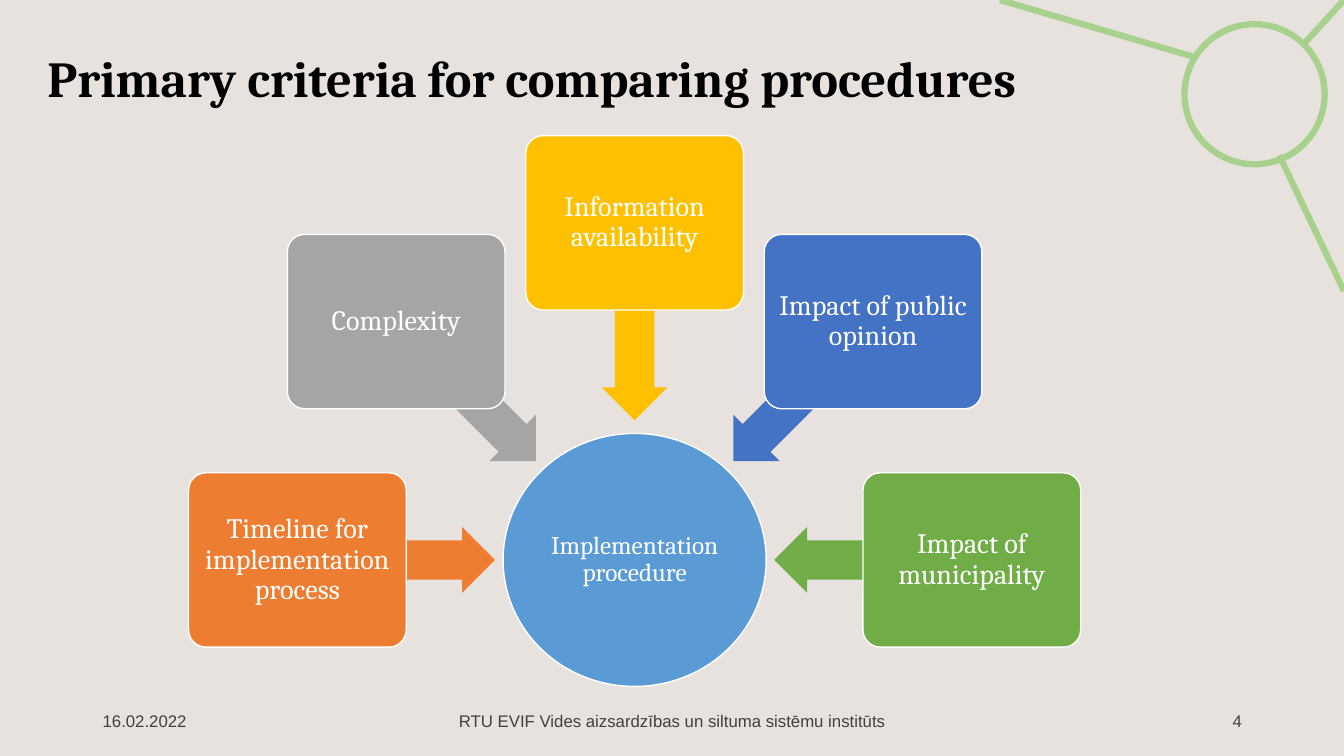
from math import cos, sin, radians
from lxml.etree import SubElement
from pptx import Presentation
from pptx.dml.color import RGBColor
from pptx.enum.shapes import MSO_CONNECTOR as Link, MSO_SHAPE as Kind
from pptx.enum.text import MSO_ANCHOR as Anchor, MSO_AUTO_SIZE as Fit, PP_ALIGN as Align
from pptx.oxml.ns import qn
from pptx.util import Inches, Pt

SAND = RGBColor(0xE7, 0xE2, 0xDD)
LIME = RGBColor(0xA9, 0xD1, 0x8E)
BLACK = RGBColor(0, 0, 0)
DARK = RGBColor(0x40, 0x40, 0x40)
WHITE = RGBColor(0xFF, 0xFF, 0xFF)
SKY = RGBColor(0x5B, 0x9B, 0xD5)
ORANGE = RGBColor(0xED, 0x7D, 0x31)
GREY = RGBColor(0xA5, 0xA5, 0xA5)
GOLD = RGBColor(0xFF, 0xC0, 0x00)
BLUE = RGBColor(0x44, 0x72, 0xC4)
GREEN = RGBColor(0x70, 0xAD, 0x47)

deck = Presentation()
deck.slide_width, deck.slide_height = Inches(13.33), Inches(7.5)
slide = deck.slides.add_slide(deck.slide_layouts[5])
slide.background.fill.solid()
slide.background.fill.fore_color.rgb = SAND
shapes = slide.shapes


def share(*marks):
    sides = (deck.slide_width, deck.slide_height) * 2
    return [round(side * mark / 100) for side, mark in zip(sides, marks)]


def write(shape, text, size, face, color, align, bold=False, inset=None, lead=0.9):
    frame = shape.text_frame
    frame.text = text
    look = {"word_wrap": True, "auto_size": Fit.NONE, "vertical_anchor": Anchor.MIDDLE}
    if inset is not None:
        for side in ("left", "top", "right", "bottom"):
            look["margin_" + side] = Inches(inset)
    for key, value in look.items():
        setattr(frame, key, value)
    para = frame.paragraphs[0]
    para.alignment, para.line_spacing = align, lead
    for key, value in {"size": Pt(size), "name": face, "bold": bold}.items():
        setattr(para.font, key, value)
    para.font.color.rgb = color


ring = shapes.add_shape(Kind.OVAL, *share(88.13, 3.2, 10.43, 18.53))
ring.shadow.inherit = False
ring.fill.background()
ring.line.color.rgb, ring.line.width = LIME, Pt(4.5)

for ends in ((100, 38.53, 95.18, 20.53), (88.73, 7.47, 74.4, 0), (100, 0, 96.98, 5.87)):
    spoke = shapes.add_connector(Link.STRAIGHT, *share(*ends))
    spoke.line.color.rgb, spoke.line.width = LIME, Pt(4.5)
    SubElement(spoke._element.spPr, qn("a:effectLst"))

title = shapes.title
title.left, title.top, title.width, title.height = share(2.78, 4.13, 88.43, 13.2)
write(title, "Primary criteria for comparing procedures", 36, "Cambria", BLACK, Align.LEFT, True)

for left, width, text, align in (
    (6.9, 22.5, "16.02.2022", Align.LEFT),
    (33.15, 33.75, "RTU EVIF Vides aizsardzības un siltuma sistēmu institūts", Align.CENTER),
    (70.65, 22.5, "4", Align.RIGHT),
):
    foot = shapes.add_textbox(*share(left, 92.67, width, 5.33))
    write(foot, text, 12, "Arial", DARK, align, lead=1)

MID, ROW = 47.22, 74.07
parts = [(Kind.OVAL, SKY, MID, ROW, 19.58, 33.47, 0, "Implementation procedure")]
topics = (
    ("Timeline for implementation process", ORANGE),
    ("Complexity", GREY),
    ("Information availability", GOLD),
    ("Impact of public opinion", BLUE),
    ("Impact of municipality", GREEN),
)
for step, (text, color) in enumerate(topics):
    turn = 180 + 45 * step
    across, down = cos(radians(turn)), sin(radians(turn))
    parts += [
        (Kind.LEFT_ARROW, color, MID + 17.7 * across, ROW + 31.47 * down, 14.62, 8.67, turn % 360, ""),
        (Kind.ROUNDED_RECTANGLE, color, MID + 25.09 * across, ROW + 44.6 * down, 16.2, 23.07, 0, text),
    ]

for kind, color, x, y, width, height, turn, text in parts:
    part = shapes.add_shape(kind, *share(x - width / 2, y - height / 2, width, height))
    part.shadow.inherit = False
    part.rotation = turn
    part.fill.solid()
    part.fill.fore_color.rgb = color
    if kind == Kind.LEFT_ARROW:
        part.adjustments[0], part.adjustments[1] = 0.6, 0.5
        part.line.fill.background()
        continue
    part.line.color.rgb, part.line.width = WHITE, Pt(1)
    hub = kind == Kind.OVAL
    if not hub:
        part.adjustments[0] = 0.1
    write(part, text, 18 if hub else 20, "Cambria", WHITE, Align.CENTER, inset=0.01 if hub else 0.04)

deck.save("out.pptx")
